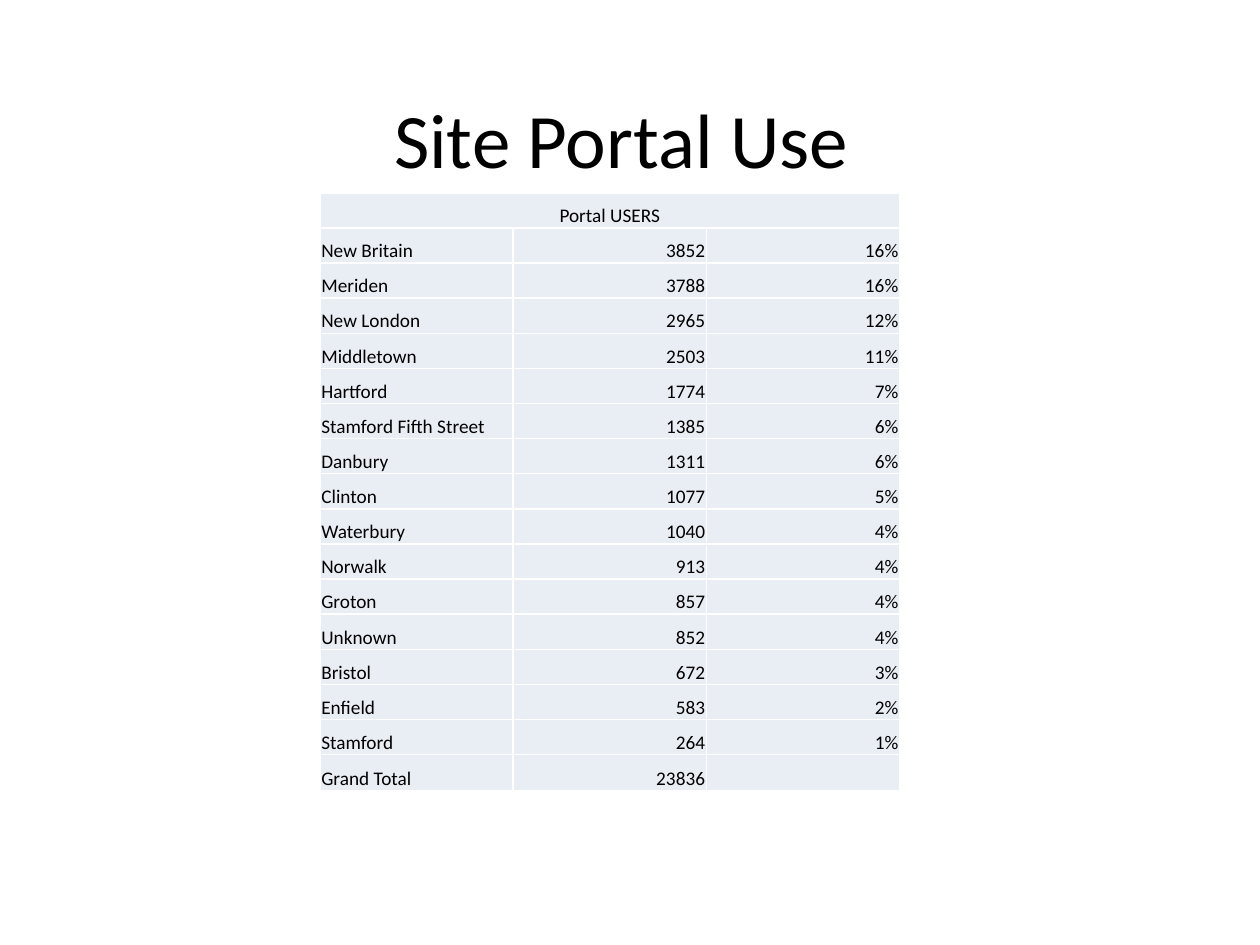
from typing import NamedTuple

from lxml import etree
from pptx import Presentation, util as u
from pptx.dml import color
from pptx.enum import text
from pptx.oxml import ns


class Site(NamedTuple):
    name: str
    users: str
    share: str


SITES = [
    Site("New Britain", "3852", "16%"),
    Site("Meriden", "3788", "16%"),
    Site("New London", "2965", "12%"),
    Site("Middletown", "2503", "11%"),
    Site("Hartford", "1774", "7%"),
    Site("Stamford Fifth Street", "1385", "6%"),
    Site("Danbury", "1311", "6%"),
    Site("Clinton", "1077", "5%"),
    Site("Waterbury", "1040", "4%"),
    Site("Norwalk", "913", "4%"),
    Site("Groton", "857", "4%"),
    Site("Unknown", "852", "4%"),
    Site("Bristol", "672", "3%"),
    Site("Enfield", "583", "2%"),
    Site("Stamford", "264", "1%"),
    Site("Grand Total", "23836", ""),
]
LEFT, CENTER, RIGHT = text.PP_ALIGN.LEFT, text.PP_ALIGN.CENTER, text.PP_ALIGN.RIGHT


def rgb(value: str) -> color.RGBColor:
    return color.RGBColor.from_string(value)


def style_paragraph(p, size: float, align) -> None:
    p.alignment = align
    p.font.name = "Calibri"
    p.font.size = u.Pt(size)
    p.font.color.rgb = rgb("000000")


def add_borders(cell, value: str, width: float) -> None:
    tc_pr = cell._tc.get_or_add_tcPr()
    for side in ("lnL", "lnR", "lnT", "lnB"):
        ln = etree.SubElement(tc_pr, ns.qn(f"a:{side}"), w=str(u.Pt(width)))
        fill = etree.SubElement(ln, ns.qn("a:solidFill"))
        etree.SubElement(fill, ns.qn("a:srgbClr"), val=value)


def fill_cell(cell, value: str, align) -> None:
    add_borders(cell, "FFFFFF", 1)
    cell.fill.solid()
    cell.fill.fore_color.rgb = rgb("E9EDF4")
    cell.margin_left = cell.margin_right = cell.margin_top = u.Inches(0.01)
    cell.margin_bottom = u.Inches(0)
    cell.vertical_anchor = text.MSO_ANCHOR.BOTTOM
    p = cell.text_frame.paragraphs[0]
    style_paragraph(p, 11, align)
    if value:
        p.add_run().text = value
    else:
        etree.SubElement(p._p, ns.qn("a:endParaRPr"), sz="1100")


def add_title(s, title: str) -> None:
    sp = s.shapes.add_textbox(u.Inches(0.5), u.Inches(0.64), u.Inches(9), u.Inches(0.91))
    tf = sp.text_frame
    tf.word_wrap = True
    tf.vertical_anchor = text.MSO_ANCHOR.MIDDLE
    p = tf.paragraphs[0]
    p.text = title
    style_paragraph(p, 44, CENTER)


def add_site_table(s, heading: str, sites: list[Site]) -> None:
    height, last_height = u.Inches(4.75), u.Inches(0.29)
    table = s.shapes.add_table(
        len(sites) + 1, 3, u.Inches(2.54), u.Inches(1.53), u.Inches(4.6), height
    ).table
    table.first_row = table.horz_banding = False
    for row in table.rows:
        row.height = (height - last_height) // len(sites)
    table.rows[len(sites)].height = last_height
    for i, site in enumerate([Site(heading, "", ""), *sites]):
        for j, value in enumerate(site):
            align = CENTER if i == 0 else RIGHT if j else LEFT
            fill_cell(table.cell(i, j), value, align)
    table.cell(0, 0).merge(table.cell(0, 2))


def main() -> None:
    prs = Presentation()
    prs.slide_width, prs.slide_height = u.Inches(10), u.Inches(7.5)
    s = prs.slides.add_slide(prs.slide_layouts[6])
    add_title(s, "Site Portal Use ")
    add_site_table(s, "Portal USERS", SITES)
    prs.save("out.pptx")


if __name__ == "__main__":
    main()
